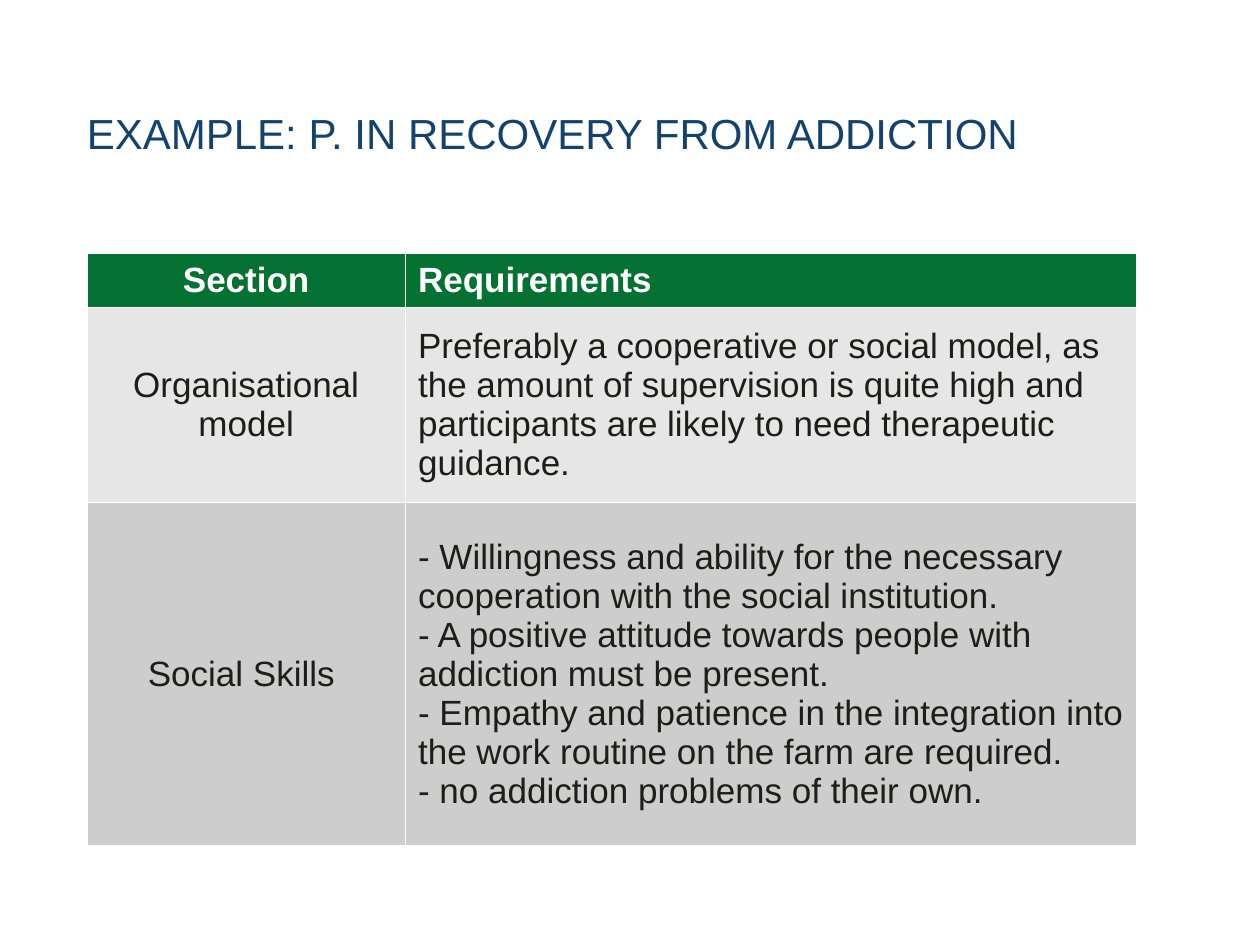
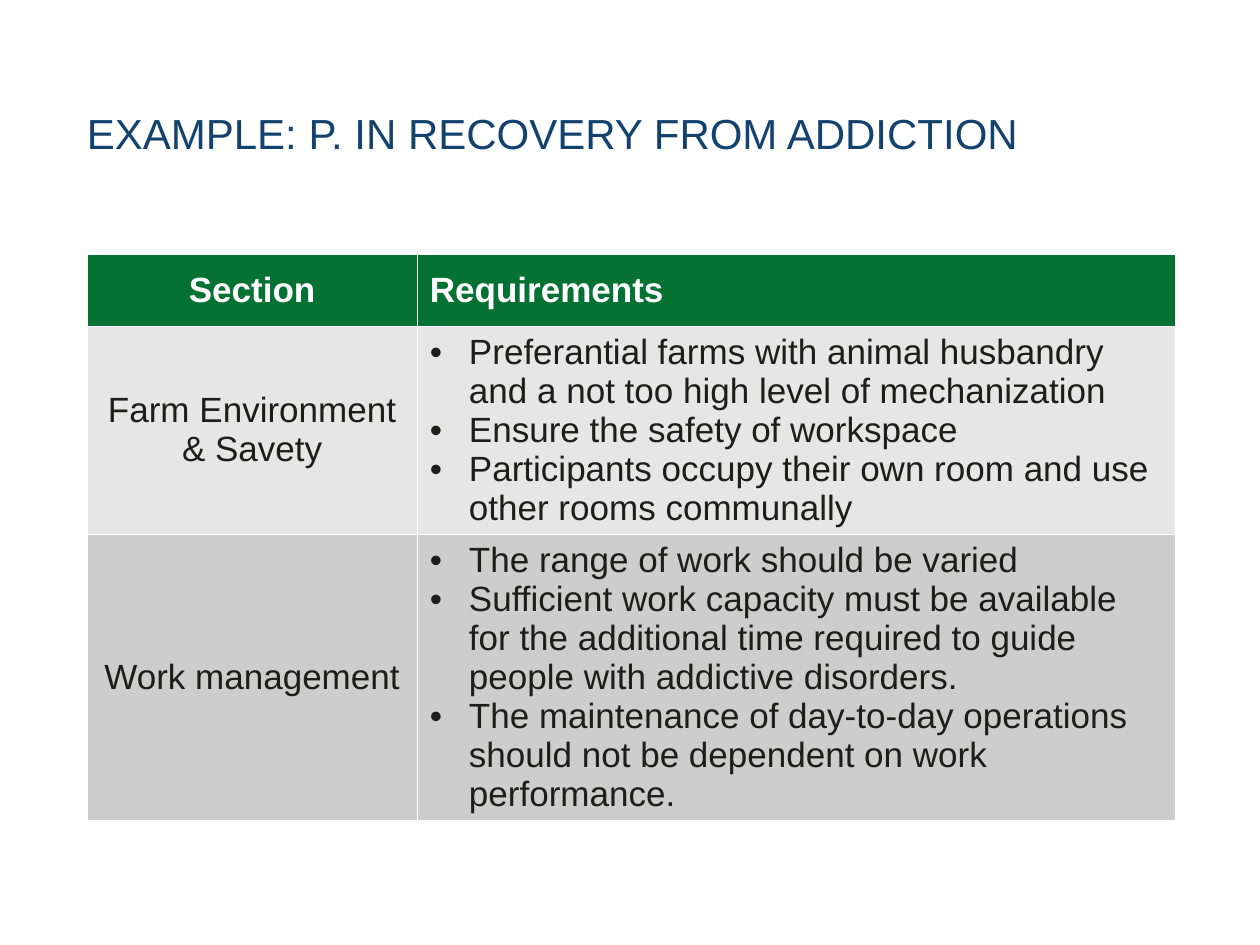
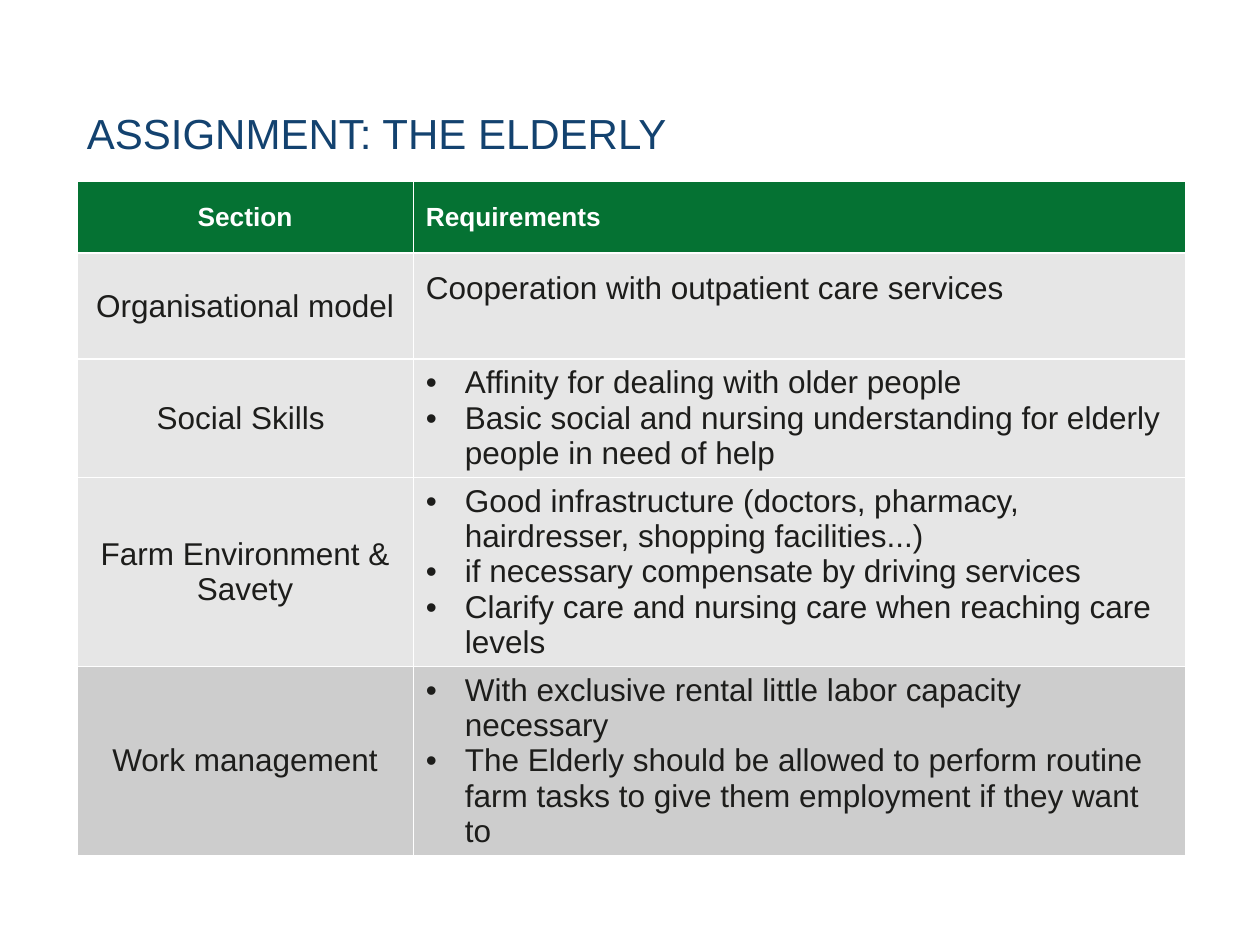
from dataclasses import dataclass

from lxml import etree
from pptx import Presentation
from pptx.dml.color import RGBColor
from pptx.enum.text import MSO_ANCHOR, MSO_AUTO_SIZE, PP_ALIGN
from pptx.oxml.ns import qn
from pptx.util import Emu, Inches, Pt

LEFT, CENTER = PP_ALIGN.LEFT, PP_ALIGN.CENTER
TOP, MIDDLE = MSO_ANCHOR.TOP, MSO_ANCHOR.MIDDLE
NO_AUTOFIT = MSO_AUTO_SIZE.NONE

SLIDE_WIDTH, SLIDE_HEIGHT = Inches(10), Inches(7.5)
TITLE_ONLY = 5
FONT = "Arial"
NAVY, GREEN, INK = "13426F", "057233", "1D1D1B"
WHITE, LIGHT_GREY, MID_GREY = "FFFFFF", "E6E6E6", "CDCDCD"
TITLE_LEFT, TITLE_WIDTH = 6.9, 86.4
SECTION_SHARE = 30.35
BULLET_INDENT = Inches(0.31)
THICK, THIN = 1, 0.75
HEADINGS = ("Section", "Requirements")


@dataclass
class Section:
    name: str
    requirements: list[str]
    height: float
    bulleted: bool = True
    space_below: float = 0.05


@dataclass
class RequirementsSlide:
    """Table lengths are percentages of the slide's width or height."""
    title: str
    left: float
    top: float
    width: float
    header_height: float
    header_size: int
    body_size: int
    sections: list[Section]


ADDICTION = "EXAMPLE: P. IN RECOVERY FROM ADDICTION"
SLIDES = [
    RequirementsSlide(ADDICTION, TITLE_LEFT, 26.8, 83.3, 5.73, 20, 20, [
        Section("Organisational model", [
            "Preferably a cooperative or social model, as the amount of supervision is "
            "quite high and participants are likely to need therapeutic guidance.",
        ], 20.67, bulleted=False),
        Section("Social Skills ", [
            "- Willingness and ability for the necessary cooperation with the social institution.",
            "- A positive attitude towards people with addiction must be present.",
            "- Empathy and patience in the integration into the work routine on the farm are required.",
            "- no addiction problems of their own.",
        ], 36.27, bulleted=False),
    ]),
    RequirementsSlide(ADDICTION, TITLE_LEFT, 26.93, TITLE_WIDTH, 7.6, 20, 20, [
        Section("Farm Environment & Savety", [
            "Preferantial farms with animal husbandry and a not too high level of mechanization",
            "Ensure the safety of workspace",
            "Participants occupy their own room and use other rooms communally",
        ], 22),
        Section("Work management", [
            "The range of work should be varied",
            "Sufficient work capacity must be available for the additional time required "
            "to guide people with addictive disorders.",
            "The maintenance of day-to-day operations should not be dependent on work performance.",
        ], 30.13),
    ]),
    RequirementsSlide("ASSIGNMENT: THE ELDERLY", 6.1, 19.2, 88, 7.6, 15, 18, [
        Section("Organisational model", ["Cooperation with outpatient care services"],
                11.2, bulleted=False, space_below=0.33),
        Section("Social Skills ", [
            "Affinity for dealing with older people",
            "Basic social and nursing understanding for elderly people in need of help",
        ], 12.53),
        Section("Farm Environment & Savety", [
            "Good infrastructure (doctors, pharmacy, hairdresser, shopping facilities...)",
            "if necessary compensate by driving services",
            "Clarify care and nursing care when reaching care levels",
        ], 20),
        Section("Work management", [
            "With exclusive rental little labor capacity necessary",
            "The Elderly should be allowed to perform routine farm tasks to give them "
            "employment if they want to",
        ], 20),
    ]),
]


def across(percent: float) -> Emu:
    return Emu(round(SLIDE_WIDTH * percent / 100))


def down(percent: float) -> Emu:
    return Emu(round(SLIDE_HEIGHT * percent / 100))


def color(value: str) -> RGBColor:
    return RGBColor.from_string(value)


def style_runs(paragraph, size: int, ink: str, bold: bool = False) -> None:
    for run in paragraph.runs:
        run.font.name = FONT
        run.font.size = Pt(size)
        run.font.bold = bold
        run.font.color.rgb = color(ink)


def add_bullet(paragraph) -> None:
    properties = paragraph._p.get_or_add_pPr()
    properties.set("marL", str(BULLET_INDENT))
    properties.set("indent", str(-BULLET_INDENT))
    etree.SubElement(properties, qn("a:buFont"), typeface=FONT)
    etree.SubElement(properties, qn("a:buChar"), char="•")


def add_borders(cell, top: float, bottom: float) -> None:
    properties = cell._tc.get_or_add_tcPr()
    for side, width in (("L", THICK), ("R", THICK), ("T", top), ("B", bottom)):
        line = etree.SubElement(properties, qn(f"a:ln{side}"), w=str(Pt(width)))
        fill = etree.SubElement(line, qn("a:solidFill"))
        etree.SubElement(fill, qn("a:srgbClr"), val=WHITE)


def fill_cell(cell, lines: list[str], size: int, ink: str, fill: str, align,
              bold: bool = False, bulleted: bool = False,
              top: float = THICK, bottom: float = THICK) -> None:
    add_borders(cell, top, bottom)
    cell.fill.solid()
    cell.fill.fore_color.rgb = color(fill)
    cell.vertical_anchor = MIDDLE
    cell.text_frame.text = "\n".join(lines)
    for paragraph in cell.text_frame.paragraphs:
        paragraph.alignment = align
        if bulleted:
            add_bullet(paragraph)
        style_runs(paragraph, size, ink, bold)


def add_title(slide, text: str) -> None:
    title = slide.shapes.title
    title.left, title.top = across(TITLE_LEFT), down(9.73)
    title.width, title.height = across(TITLE_WIDTH), down(9.47)
    frame = title.text_frame
    frame.text = text
    frame.word_wrap = True
    frame.auto_size = NO_AUTOFIT
    frame.vertical_anchor = TOP
    frame.margin_left = 0
    heading = frame.paragraphs[0]
    heading.alignment = LEFT
    heading.line_spacing = Pt(34)
    style_runs(heading, 24, NAVY)


def add_requirements(slide, content: RequirementsSlide) -> None:
    heights = [content.header_height] + [section.height for section in content.sections]
    table = slide.shapes.add_table(
        len(heights), len(HEADINGS), across(content.left), down(content.top),
        across(content.width), down(sum(heights))).table
    table.columns[0].width = across(content.width * SECTION_SHARE / 100)
    table.columns[1].width = across(content.width) - table.columns[0].width
    for row, height in zip(table.rows, heights):
        row.height = down(height)

    for column, (heading, align) in enumerate(zip(HEADINGS, (CENTER, LEFT))):
        fill_cell(table.cell(0, column), [heading], content.header_size, WHITE, GREEN,
                  align, bold=True)
    last = len(content.sections)
    for row, section in enumerate(content.sections, start=1):
        shared = dict(size=content.body_size, ink=INK,
                      fill=MID_GREY if row == last else LIGHT_GREY,
                      top=THIN if row == last else THICK,
                      bottom=THIN if row >= last - 1 else THICK)
        fill_cell(table.cell(row, 0), [section.name], align=CENTER, **shared)
        requirements = table.cell(row, 1)
        fill_cell(requirements, section.requirements, align=LEFT,
                  bulleted=section.bulleted, **shared)
        requirements.margin_bottom = Inches(section.space_below)


def main() -> None:
    deck = Presentation()
    deck.slide_width, deck.slide_height = SLIDE_WIDTH, SLIDE_HEIGHT
    for content in SLIDES:
        slide = deck.slides.add_slide(deck.slide_layouts[TITLE_ONLY])
        add_title(slide, content.title)
        add_requirements(slide, content)
    deck.save("out.pptx")


if __name__ == "__main__":
    main()
